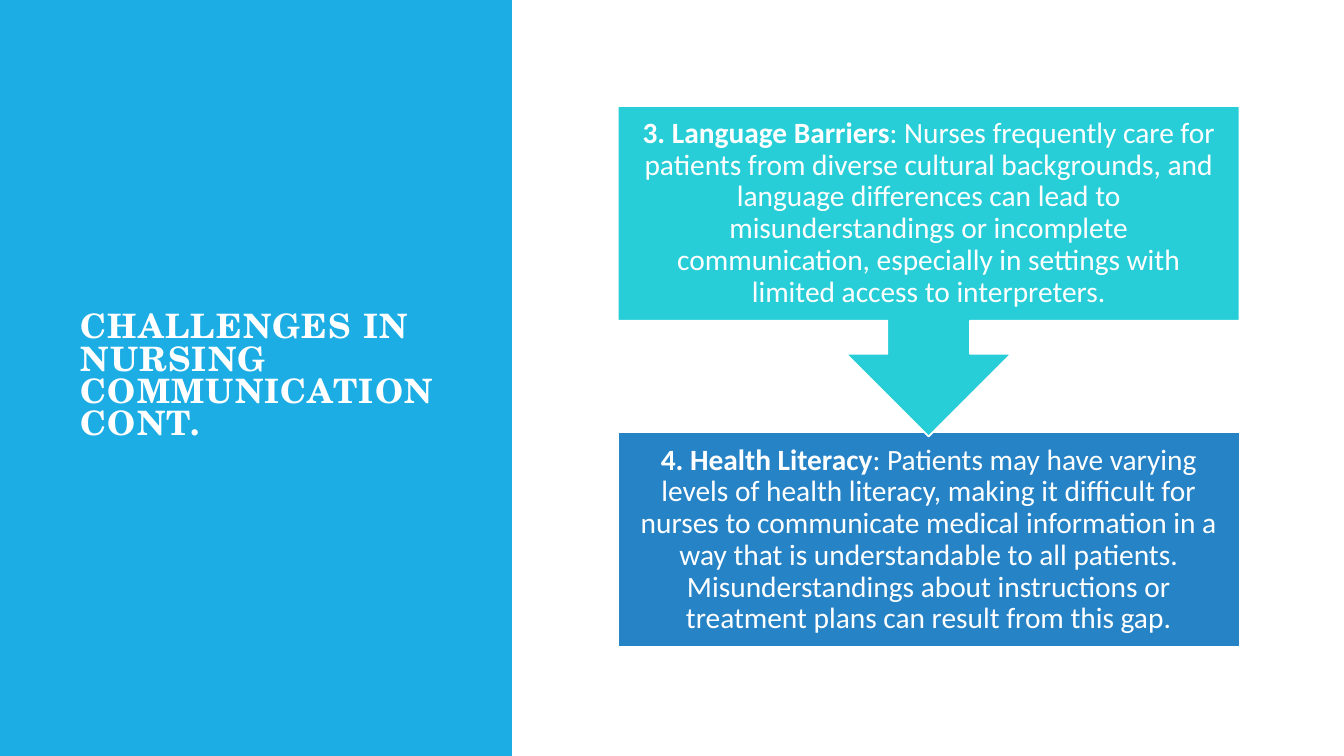
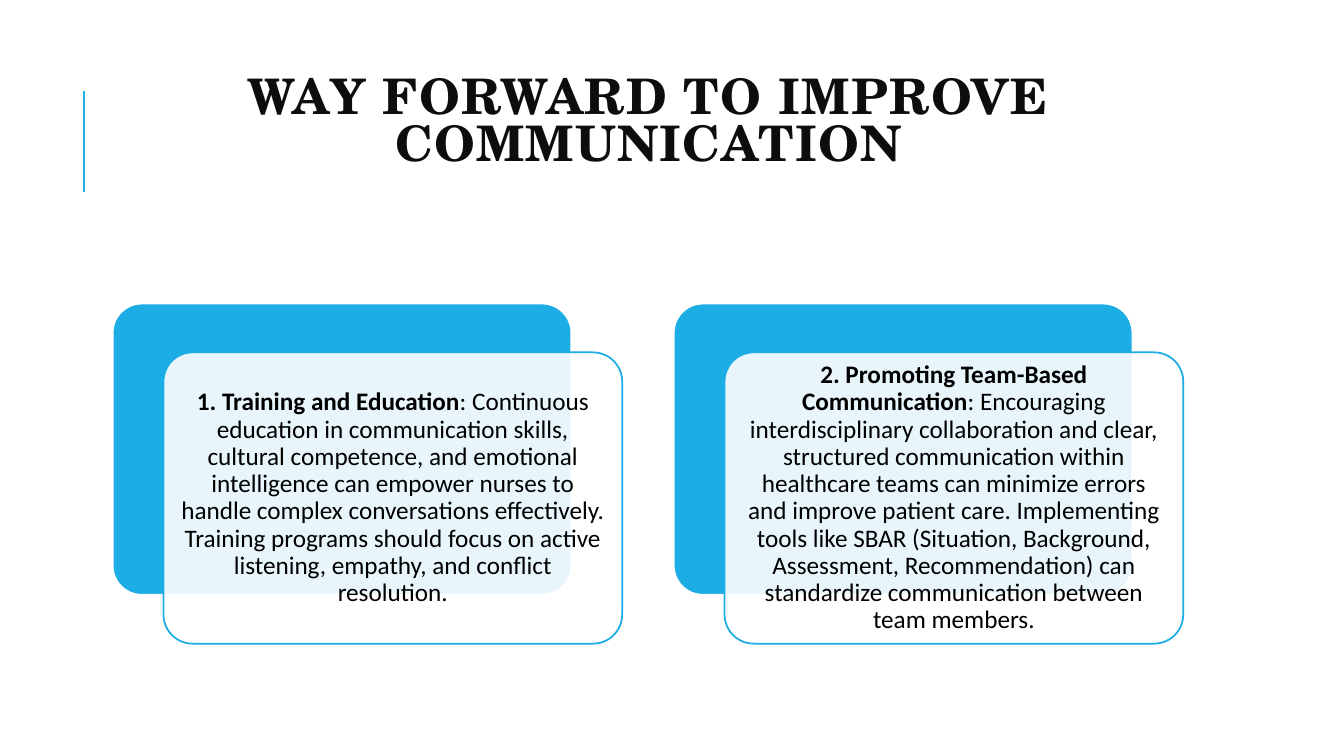
"""Build two slides on challenges and ways forward in nursing communication."""
from dataclasses import dataclass

from lxml.etree import SubElement
from pptx import Presentation
from pptx.dml.color import RGBColor
from pptx.enum.shapes import MSO_CONNECTOR as Connector, MSO_SHAPE as Preset
from pptx.enum.text import MSO_ANCHOR as Anchor, MSO_AUTO_SIZE as AutoSize, PP_ALIGN as Align
from pptx.oxml.ns import qn
from pptx.util import Cm, Pt


@dataclass(frozen=True)
class Theme:
    accent: str = "1CADE4"
    blue: str = "2683C6"
    teal: str = "27CED7"
    white: str = "FFFFFF"
    ink: str = "0D0D0D"
    black: str = "000000"
    title_font: str = "TeX Gyre Schola"
    body_font: str = "Calibri"
    side_title: int = 24
    top_title: int = 35
    step_size: int = 21
    card_size: int = 18
    outline: float = 1.25
    rule: float = 1.5


@dataclass(frozen=True)
class Box:
    left: float
    top: float
    width: float
    height: float

    def lengths(self) -> tuple:
        return Cm(self.left), Cm(self.top), Cm(self.width), Cm(self.height)

    def moved(self, right: float, down: float = 0) -> "Box":
        return Box(self.left + right, self.top + down, self.width, self.height)


@dataclass(frozen=True)
class Point:
    heading: str
    detail: str


@dataclass(frozen=True)
class Step:
    point: Point
    preset: Preset
    box: Box
    fill: str


THEME = Theme()
PANEL = Box(0, 0, 12.9, 19.05)
SIDE_TITLE = Box(1.78, 1.78, 9.5, 15.47)
TOP_TITLE = Box(2.84, 1.63, 27, 4.17)
CARD = Box(2.84, 7.65, 11.56, 7.34)
CARD_PITCH = 14.14
CARD_SHIFT = (1.28, 1.23)
CARD_OPACITY = 90

STEPS = [
    Step(
        Point(
            "4. Health Literacy",
            ": Patients may have varying levels of health literacy, making it difficult "
            "for nurses to communicate medical information in a way that is understandable "
            "to all patients. Misunderstandings about instructions or treatment plans can "
            "result from this gap.",
        ),
        Preset.RECTANGLE, Box(15.57, 10.9, 15.67, 5.41), THEME.blue,
    ),
    Step(
        Point(
            "3. Language Barriers",
            ": Nurses frequently care for patients from diverse cultural backgrounds, and "
            "language differences can lead to misunderstandings or incomplete communication, "
            "especially in settings with limited access to interpreters.",
        ),
        Preset.DOWN_ARROW_CALLOUT, Box(15.57, 2.67, 15.67, 8.33), THEME.teal,
    ),
]

CARDS = [
    Point(
        "1. Training and Education",
        ": Continuous education in communication skills, cultural competence, and emotional "
        "intelligence can empower nurses to handle complex conversations effectively. "
        "Training programs should focus on active listening, empathy, and conflict resolution.",
    ),
    Point(
        "2. Promoting Team-Based Communication",
        ": Encouraging interdisciplinary collaboration and clear, structured communication "
        "within healthcare teams can minimize errors and improve patient care. Implementing "
        "tools like SBAR (Situation, Background, Assessment, Recommendation) can standardize "
        "communication between team members.",
    ),
]


def apply(target, values: dict) -> None:
    """Set each named attribute on the target."""
    for name, value in values.items():
        setattr(target, name, value)


def style_font(font, name: str, size: int, color: str, bold: bool) -> None:
    """Give a font its face, size, weight and colour."""
    apply(font, {"name": name, "size": Pt(size), "bold": bold})
    font.color.rgb = RGBColor.from_string(color)


def add_title(slide, text: str, box: Box, size: int, color: str, align: Align):
    """Place and format the title placeholder above the shapes drawn so far."""
    title = slide.shapes.title
    slide.shapes.element.append(title.element)
    apply(title, dict(zip(("left", "top", "width", "height"), box.lengths())))
    frame = title.text_frame
    apply(frame, {"text": text, "word_wrap": True, "auto_size": AutoSize.NONE,
                  "vertical_anchor": Anchor.MIDDLE})
    paragraph = frame.paragraphs[0]
    apply(paragraph, {"alignment": align, "line_spacing": 0.8})
    run = paragraph.runs[0]
    style_font(run.font, THEME.title_font, size, color, True)
    run.font._element.set("spc", "100")
    return title


def add_box(slide, preset: Preset, box: Box, fill: str, line: str = ""):
    """Draw a filled preset shape, outlined when a line colour is given."""
    shape = slide.shapes.add_shape(preset, *box.lengths())
    shape.shadow.inherit = False
    shape.fill.solid()
    shape.fill.fore_color.rgb = RGBColor.from_string(fill)
    if line:
        shape.line.color.rgb = RGBColor.from_string(line)
        shape.line.width = Pt(THEME.outline)
    else:
        shape.line.fill.background()
    return shape


def write_point(shape, point: Point, size: int, color: str, inset: float) -> None:
    """Write a bold heading and its detail centred in a shape."""
    frame = shape.text_frame
    apply(frame, {"word_wrap": True, "vertical_anchor": Anchor.MIDDLE})
    apply(frame, {f"margin_{side}": Cm(inset) for side in ("left", "top", "right", "bottom")})
    paragraph = frame.paragraphs[0]
    apply(paragraph, {"alignment": Align.CENTER, "line_spacing": 0.9})
    for text, bold in ((point.heading, True), (point.detail, False)):
        run = paragraph.add_run()
        run.text = text
        style_font(run.font, THEME.body_font, size, color, bold)


def add_rounded(slide, box: Box, fill: str, line: str):
    """Draw a rounded card layer."""
    shape = add_box(slide, Preset.ROUNDED_RECTANGLE, box, fill, line)
    shape.adjustments[0] = 0.1
    return shape


def add_card(slide, point: Point, box: Box) -> None:
    """Draw a coloured card with a translucent text card in front."""
    add_rounded(slide, box, THEME.accent, THEME.white)
    front = add_rounded(slide, box.moved(*CARD_SHIFT), THEME.white, THEME.accent)
    color = front.fill._xPr.find(qn("a:solidFill"))[0]
    SubElement(color, qn("a:alpha"), val=str(CARD_OPACITY * 1000))
    write_point(front, point, THEME.card_size, THEME.black, 0.18)


def add_rule(slide) -> None:
    """Draw the vertical accent line beside the title."""
    rule = slide.shapes.add_connector(Connector.STRAIGHT, Cm(2.12), Cm(4.83), Cm(2.12), Cm(2.29))
    rule.line.color.rgb = RGBColor.from_string(THEME.accent)
    rule.line.width = Pt(THEME.rule)
    SubElement(rule.element.spPr, qn("a:effectLst"))


def build_challenges(slide) -> None:
    """Build the slide with the side panel and two steps."""
    add_box(slide, Preset.RECTANGLE, PANEL, THEME.accent)
    add_title(slide, "CHALLENGES IN NURSING COMMUNICATION CONT.", SIDE_TITLE,
              THEME.side_title, THEME.white, Align.LEFT)
    for step in STEPS:
        shape = add_box(slide, step.preset, step.box, step.fill, THEME.white)
        write_point(shape, step.point, THEME.step_size, THEME.white, 0.41)


def build_way_forward(slide) -> None:
    """Build the slide with the two layered cards."""
    add_rule(slide)
    title = add_title(slide, "WAY FORWARD TO IMPROVE COMMUNICATION", TOP_TITLE,
                      THEME.top_title, THEME.ink, Align.CENTER)
    title.text_frame.margin_bottom = Cm(1.32)
    for index, point in enumerate(CARDS):
        add_card(slide, point, CARD.moved(index * CARD_PITCH))


def main() -> None:
    """Create and save the presentation."""
    presentation = Presentation()
    apply(presentation, {"slide_width": Cm(33.87), "slide_height": Cm(19.05)})
    title_only = presentation.slide_layouts.get_by_name("Title Only")
    for build in (build_challenges, build_way_forward):
        build(presentation.slides.add_slide(title_only))
    presentation.save("out.pptx")


if __name__ == "__main__":
    main()
